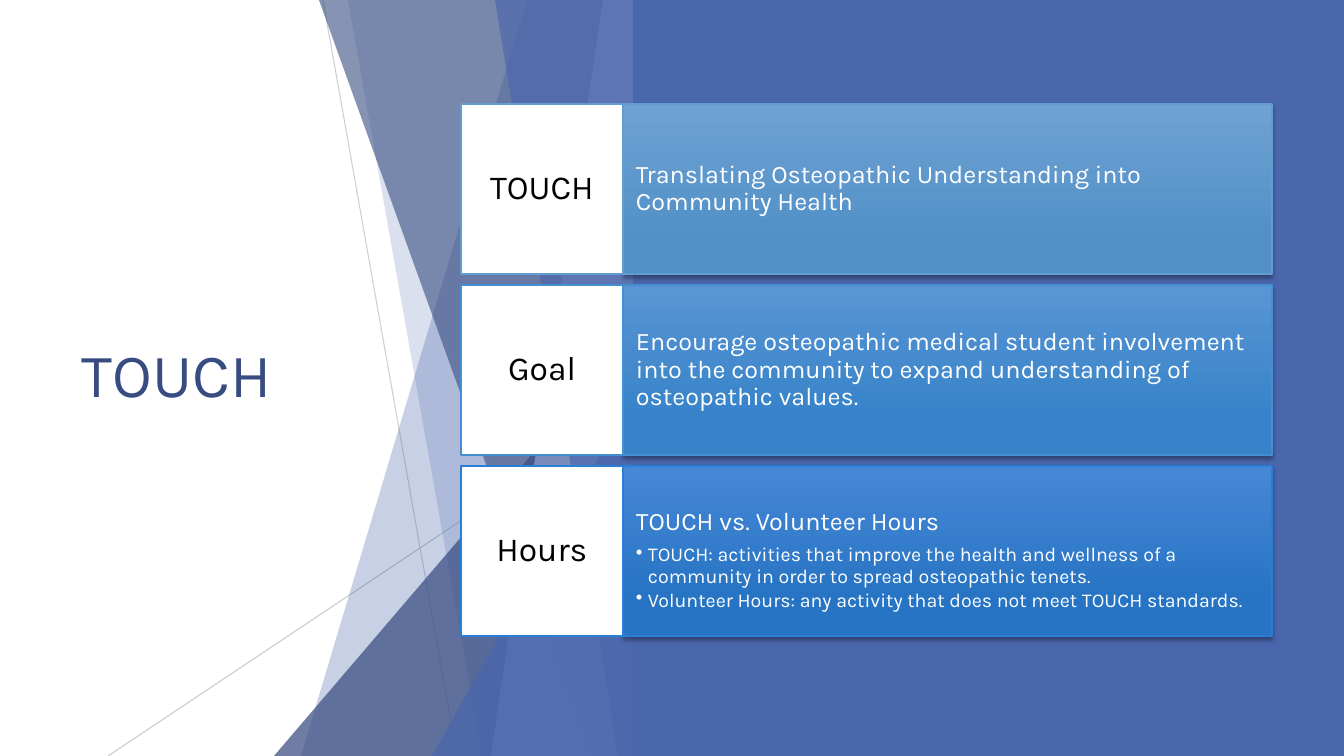
import pptx
import pptx.util
import pptx.dml.color
import pptx.enum.shapes
import pptx.enum.text
import pptx.oxml.ns
from lxml import etree

PX = 12192000 / 1344
WIDTH, HEIGHT = 1344, 756
FONT = "Karla"
BLUE, NAVY, PALE, GREY = "4A66AC", "384C81", "90A2CF", "BFBFBF"
WHITE, BLACK = "FFFFFF", "000000"
PANEL_LEFT = 633

RAYS = [((323, 0), (457, 756), 75), ((633, 406), (108, 756), 80)]
FACETS = [
    ("band", 527, 301, BLUE, 30),
    ("band", 348, 482, BLUE, 20),
    ("wedge", 274, 336, NAVY, 72),
    ("band", 319, 591, NAVY, 60),
    ("band", 603, 491, PALE, 70),
    ("band", 495, 618, BLUE, 65),
    ("wedge", 432, 396, BLUE, 80),
]
CARDS = [
    ("TOUCH", "Translating Osteopathic Understanding into Community Health", [],
     "629DD1", "6FA2D3", "5290C7"),
    ("Goal", "Encourage osteopathic medical student involvement into the community "
     "to expand understanding of osteopathic values.", [],
     "468ED2", "5995D4", "3783C9"),
    ("Hours", "TOUCH vs. Volunteer Hours", [
        "TOUCH: activities that improve the health and wellness of a community "
        "in order to spread osteopathic tenets.",
        "Volunteer Hours: any activity that does not meet TOUCH standards."],
     "297FD5", "4887D7", "2674C3"),
]
CARD_LEFT, CARD_TOP, CARD_HEIGHT, CARD_STEP = 461, 104, 170, 181
LABEL_WIDTH, BODY_WIDTH = 162, 649

SHAPES = pptx.enum.shapes.MSO_SHAPE
ANCHOR = pptx.enum.text.MSO_ANCHOR
ALIGN = pptx.enum.text.PP_ALIGN
qn = pptx.oxml.ns.qn


def emu(px):
    return pptx.util.Emu(round(px * PX))


def rgb(value):
    return pptx.dml.color.RGBColor.from_string(value)


def set_opacity(shape, percent):
    color = next(shape._element.spPr.iter(qn("a:srgbClr")))
    etree.SubElement(color, qn("a:alpha"), val=str(percent * 1000))


def fill_flat(shape, color):
    shape.shadow.inherit = False
    shape.fill.solid()
    shape.fill.fore_color.rgb = rgb(color)
    shape.line.fill.background()


def add_box(left, top, width, height, color, preset=SHAPES.RECTANGLE):
    box = slide.shapes.add_shape(preset, emu(left), emu(top), emu(width), emu(height))
    fill_flat(box, color)
    return box


def set_border(box, color):
    box.line.color.rgb = rgb(color)
    box.line.width = pptx.util.Pt(1)


def set_frame(box, anchor, inset_x, inset_y):
    frame = box.text_frame
    frame.word_wrap = True
    frame.vertical_anchor = anchor
    frame.margin_left = frame.margin_right = emu(inset_x)
    frame.margin_top = frame.margin_bottom = emu(inset_y)
    return frame


def write(para, text, size, color, align=ALIGN.LEFT, after=0.0):
    para.alignment = align
    para.line_spacing = 0.9
    para.space_before = pptx.util.Pt(0)
    para.space_after = pptx.util.Pt(round(size * after, 1))
    span = para.add_run()
    span.text = text
    span.font.name = FONT
    span.font.size = pptx.util.Pt(size)
    span.font.color.rgb = rgb(color)


def add_bullet(para):
    para.level = 1
    props = para._p.get_or_add_pPr()
    props.set("marL", str(emu(12)))
    props.set("indent", str(-emu(12)))
    etree.SubElement(props, qn("a:buChar"), char="•")


def add_shadow(box):
    effects = box._element.spPr.find(qn("a:effectLst"))
    shadow = etree.SubElement(effects, qn("a:outerShdw"), blurRad=str(pptx.util.Pt(3)),
                              dist=str(pptx.util.Pt(2)), dir="5400000", rotWithShape="0")
    color = etree.SubElement(shadow, qn("a:srgbClr"), val=BLACK)
    etree.SubElement(color, qn("a:alpha"), val="35000")


def add_ray(start, end, opacity):
    ray = slide.shapes.add_connector(pptx.enum.shapes.MSO_CONNECTOR.STRAIGHT,
                                     *map(emu, start + end))
    ray.line.color.rgb = rgb(GREY)
    ray.line.width = pptx.util.Pt(0.75)
    set_opacity(ray, opacity)
    etree.SubElement(ray._element.spPr, qn("a:effectLst"))


def add_band(top_left, bottom_left, color):
    builder = slide.shapes.build_freeform(top_left, 0, scale=PX)
    builder.add_line_segments(
        [(PANEL_LEFT, 0), (PANEL_LEFT, HEIGHT), (bottom_left, HEIGHT)], close=True)
    band = builder.convert_to_shape()
    fill_flat(band, color)
    return band


def add_wedge(left, top, color):
    wedge = add_box(left, top, PANEL_LEFT - left, HEIGHT - top, color,
                    SHAPES.ISOSCELES_TRIANGLE)
    wedge.adjustments[0] = 1
    return wedge


def add_card(top, label, heading, bullets, border, light, dark):
    body = add_box(CARD_LEFT + LABEL_WIDTH, top, BODY_WIDTH, CARD_HEIGHT, light)
    body.fill.gradient()
    body.fill.gradient_angle = 270
    for stop, color, position in zip(body.fill.gradient_stops, (light, dark), (0, 0.78)):
        stop.color.rgb = rgb(color)
        stop.position = position
    set_border(body, border)
    add_shadow(body)
    frame = set_frame(body, ANCHOR.TOP if bullets else ANCHOR.MIDDLE, 13, 43)
    write(frame.paragraphs[0], heading, 18, WHITE, after=0.35)
    for bullet in bullets:
        para = frame.add_paragraph()
        add_bullet(para)
        write(para, bullet, 14, WHITE, after=0.15)

    tag = add_box(CARD_LEFT, top, LABEL_WIDTH, CARD_HEIGHT, WHITE)
    set_border(tag, border)
    frame = set_frame(tag, ANCHOR.MIDDLE, 9, 17)
    write(frame.paragraphs[0], label, 24, BLACK, ALIGN.CENTER, 0.35)


deck = pptx.Presentation()
deck.slide_width, deck.slide_height = emu(WIDTH), emu(HEIGHT)
slide = deck.slides.add_slide(deck.slide_layouts[6])

for ray in RAYS:
    add_ray(*ray)
for kind, first, second, color, opacity in FACETS:
    add_facet = add_band if kind == "band" else add_wedge
    set_opacity(add_facet(first, second, color), opacity)

title = slide.shapes.add_textbox(emu(72), emu(152), emu(391), emu(452))
write(set_frame(title, ANCHOR.MIDDLE, 10, 5).paragraphs[0], "TOUCH", 44, NAVY)

add_box(PANEL_LEFT, 0, WIDTH - PANEL_LEFT, HEIGHT, BLUE)
for index, card in enumerate(CARDS):
    add_card(CARD_TOP + index * CARD_STEP, *card)

deck.save("out.pptx")
